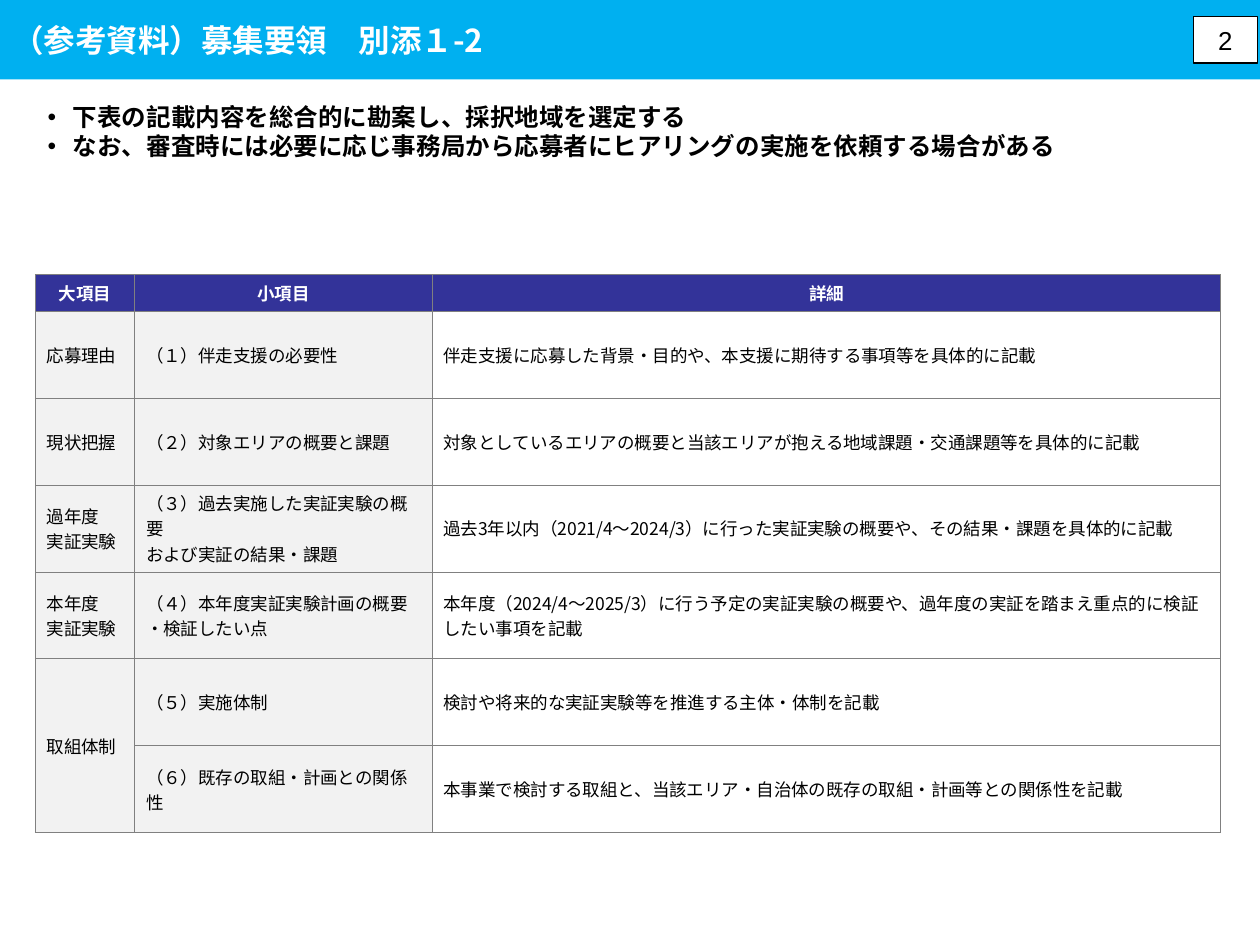
from dataclasses import dataclass

from lxml.etree import SubElement
from pptx import Presentation
from pptx.dml.color import RGBColor as Rgb
from pptx.enum.shapes import MSO_SHAPE as Kind
from pptx.enum.text import MSO_ANCHOR as Anchor, PP_ALIGN as Align
from pptx.oxml.ns import qn
from pptx.util import Inches, Pt


@dataclass(frozen=True)
class Theme:
    jp: str = "Noto Sans CJK JP"
    latin: str = "Arial"
    sky: str = "00B0F0"
    navy: str = "333399"
    pale: str = "F2F2F2"
    white: str = "FFFFFF"
    black: str = "000000"
    rule: str = "808080"
    title: float = 18
    page: float = 14.8
    lead: float = 14
    body: float = 10


@dataclass(frozen=True)
class Style:
    size: float
    face: str
    color: str
    bold: bool = False


@dataclass(frozen=True)
class Row:
    group: str
    item: str
    detail: str
    tail: str = ""  # closing words of the detail, set in the Latin face


THEME = Theme()
HEAD = ("大項目", "小項目", "詳細")
ROWS = (
    Row("応募理由", "（１）伴走支援の必要性",
        "伴走支援に応募した背景・目的や、本支援に期待する事項等を具体的に記載"),
    Row("現状把握", "（２）対象エリアの概要と課題",
        "対象としているエリアの概要と当該エリアが抱える地域課題・交通課題等を具体的に記載"),
    Row("過年度\n実証実験", "（３）過去実施した実証実験の概要\nおよび実証の結果・課題",
        "過去3年以内（2021/4～2024/3）に行った",
        "実証実験の概要や、その結果・課題を具体的に記載"),
    Row("本年度\n実証実験", "（４）本年度実証実験計画の概要\n・検証したい点",
        "本年度（2024/4～2025/3）に行う予定の",
        "実証実験の概要や、過年度の実証を踏まえ重点的に検証したい事項を記載"),
    Row("取組体制", "（５）実施体制",
        "検討や将来的な実証実験等を推進する主体・体制を記載"),
    Row("", "（６）既存の取組・計画との関係性",
        "本事業で検討する取組と、当該エリア・自治体の既存の取組・計画等との関係性を記載"),
)
LEADS = (
    "下表の記載内容を総合的に勘案し、採択地域を選定する",
    "なお、審査時には必要に応じ事務局から応募者にヒアリングの実施を依頼する場合がある",
)


def set_font(font, style: Style) -> None:
    font.size = Pt(style.size)
    font.bold = style.bold
    font.color.rgb = Rgb.from_string(style.color)
    font.name = style.face


def write(para, text: str, style: Style, align=Align.LEFT) -> None:
    para.text = text
    para.alignment = align
    set_font(para.font, style)


def add_box(slide, area: tuple, fill: str, text: str, style: Style,
            align=Align.LEFT, line: str = "") -> None:
    box = slide.shapes.add_shape(Kind.RECTANGLE, *map(Inches, area))
    box.shadow.inherit = False
    box.fill.solid()
    box.fill.fore_color.rgb = Rgb.from_string(fill)
    if line:
        box.line.color.rgb = Rgb.from_string(line)
        box.line.width = Pt(0.75)
    else:
        box.line.fill.background()
    box.text_frame.vertical_anchor = Anchor.MIDDLE
    write(box.text_frame.paragraphs[0], text, style, align)


def add_leads(slide) -> None:
    box = slide.shapes.add_textbox(*map(Inches, (0.28, 0.76, 9.45, 0.63)))
    frame = box.text_frame
    frame.word_wrap = True
    style = Style(THEME.lead, THEME.latin, THEME.black, True)
    for i, text in enumerate(LEADS):
        para = frame.add_paragraph() if i else frame.paragraphs[0]
        props = para._p.get_or_add_pPr()
        props.set("marL", str(Inches(0.2)))
        props.set("indent", str(-Inches(0.2)))
        SubElement(props, qn("a:buFont"), typeface=THEME.latin)
        SubElement(props, qn("a:buChar"), char="•")
        write(para, text, style)


def dress(cell, fill: str) -> None:
    """Give a cell its rules, fill, anchor and margins."""
    cell.vertical_anchor = Anchor.MIDDLE
    cell.margin_left = cell.margin_right = Inches(0.09)
    cell.margin_top = cell.margin_bottom = Inches(0.04)
    props = cell._tc.get_or_add_tcPr()
    for side in "LRTB":
        line = SubElement(props, qn(f"a:ln{side}"), w=str(Pt(0.5)))
        paint = SubElement(line, qn("a:solidFill"))
        SubElement(paint, qn("a:srgbClr"), val=THEME.rule)
    cell.fill.solid()
    cell.fill.fore_color.rgb = Rgb.from_string(fill)


def add_grid(slide) -> None:
    widths, top, high = (0.79, 2.36, 6.26), 0.29, 0.69
    area = (0.28, 2.18, sum(widths), top + high * len(ROWS))
    table = slide.shapes.add_table(len(ROWS) + 1, len(HEAD), *map(Inches, area)).table
    table.first_row = table.horz_banding = False
    for col, width in zip(table.columns, widths):
        col.width = Inches(width)
    for i, row in enumerate(table.rows):
        row.height = Inches(high if i else top)

    head = Style(THEME.body, THEME.jp, THEME.white, True)
    body = Style(THEME.body, THEME.jp, THEME.black)
    tail = Style(THEME.body, THEME.latin, THEME.black)
    for c, text in enumerate(HEAD):
        cell = table.cell(0, c)
        dress(cell, THEME.navy)
        write(cell.text_frame.paragraphs[0], text, head, Align.CENTER)
    for r, row in enumerate(ROWS, 1):
        for c, text in enumerate((row.group, row.item, row.detail)):
            cell = table.cell(r, c)
            dress(cell, THEME.white if c == 2 else THEME.pale)
            para = cell.text_frame.paragraphs[0]
            if text:
                write(para, text, body)
            if c == 2 and row.tail:
                run = para.add_run()
                run.text = row.tail
                set_font(run.font, tail)
        if not row.group:
            table.cell(r - 1, 0).merge(table.cell(r, 0))


def main() -> None:
    deck = Presentation()
    deck.slide_width, deck.slide_height = Inches(10), Inches(7.5)
    slide = deck.slides.add_slide(deck.slide_layouts[6])
    add_box(slide, (0, 0, 10, 0.63), THEME.sky, "（参考資料）募集要領　別添１-2",
            Style(THEME.title, THEME.jp, THEME.white, True))
    add_box(slide, (9.47, 0.13, 0.51, 0.37), THEME.white, "2",
            Style(THEME.page, THEME.latin, THEME.black), Align.CENTER, THEME.black)
    add_grid(slide)
    add_leads(slide)
    deck.save("out.pptx")


if __name__ == "__main__":
    main()
